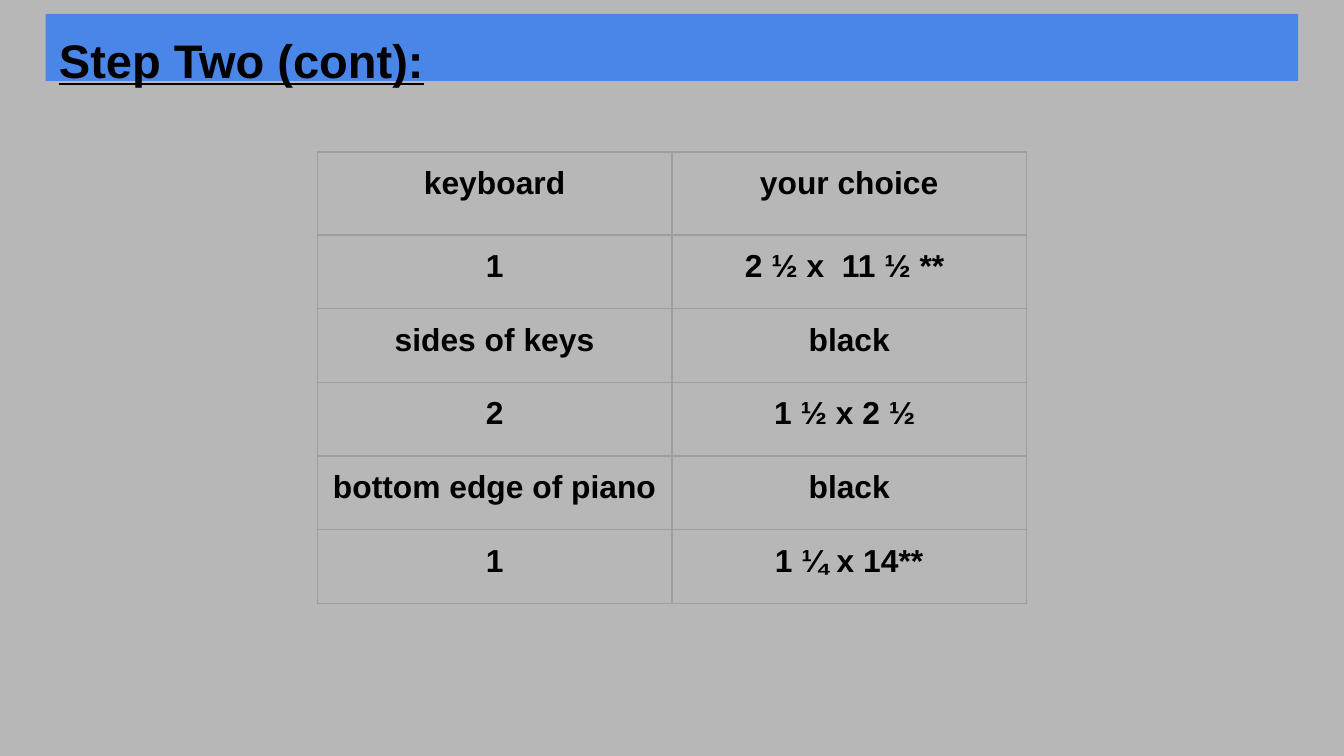
from lxml.etree import SubElement
from pptx import Presentation
from pptx.dml.color import RGBColor
from pptx.enum.shapes import MSO_SHAPE
from pptx.enum.text import MSO_ANCHOR, PP_ALIGN
from pptx.oxml.ns import qn
from pptx.util import Pt

FONT = "Arial"
INSET = 7.2
ROWS = [
    ("keyboard", "your choice"),
    ("1", "2 ½ x  11 ½ ** "),
    ("sides of keys", "black"),
    ("2", "1 ½ x 2 ½ "),
    ("bottom edge of piano", "black"),
    ("1", "1 ¼ x 14**"),
]


def rgb(value):
    return RGBColor.from_string(value)


def add_run(p, text, size, underline=None):
    r = p.add_run()
    r.text = text
    r.font.name = FONT
    r.font.size = Pt(size)
    r.font.bold = True
    r.font.underline = underline
    r.font.color.rgb = rgb("000000")


def set_margins(box, top=INSET):
    """Set the text insets of a text frame or a table cell."""
    box.margin_left = box.margin_right = box.margin_bottom = Pt(INSET)
    box.margin_top = Pt(top)
    box.vertical_anchor = MSO_ANCHOR.TOP


def add_title_bar(s, text):
    sp = s.shapes.add_shape(MSO_SHAPE.RECTANGLE, Pt(24.5), Pt(7.4), Pt(671), Pt(36))
    sp.shadow.inherit = False
    sp.fill.solid()
    sp.fill.fore_color.rgb = rgb("4A86E8")
    sp.line.fill.background()
    tf = sp.text_frame
    tf.word_wrap = True
    set_margins(tf, top=9.7)
    p = tf.paragraphs[0]
    p.alignment = PP_ALIGN.LEFT
    add_run(p, text, 25.2, underline=True)


def set_borders(cell, color, width):
    tc_pr = cell._tc.get_or_add_tcPr()
    for i, side in enumerate(("a:lnL", "a:lnR", "a:lnT", "a:lnB")):
        ln = SubElement(tc_pr, qn(side), w=str(Pt(width)))
        fill = SubElement(ln, qn("a:solidFill"))
        SubElement(fill, qn("a:srgbClr"), val=color)
        tc_pr.remove(ln)
        tc_pr.insert(i, ln)


def fill_cell(cell, text):
    set_margins(cell)
    cell.fill.background()
    set_borders(cell, "9E9E9E", 0.75)
    p = cell.text_frame.paragraphs[0]
    p.alignment = PP_ALIGN.CENTER
    add_run(p, text, 17)


def add_size_table(s, rows):
    heights = [44.5] + [39.5] * (len(rows) - 1)
    widths = [190] * len(rows[0])
    frame = s.shapes.add_table(len(rows), len(widths), Pt(170), Pt(81.4),
                               Pt(sum(widths)), Pt(sum(heights)))
    table = frame.table
    table.first_row = table.horz_banding = False
    for column, width in zip(table.columns, widths):
        column.width = Pt(width)
    for row, height, texts in zip(table.rows, heights, rows):
        row.height = Pt(height)
        for cell, text in zip(row.cells, texts):
            fill_cell(cell, text)


def main():
    prs = Presentation()
    prs.slide_width, prs.slide_height = Pt(720), Pt(405)
    s = prs.slides.add_slide(prs.slide_layouts[6])
    s.background.fill.solid()
    s.background.fill.fore_color.rgb = rgb("B7B7B7")
    add_title_bar(s, "Step Two (cont):")
    add_size_table(s, ROWS)
    prs.save("out.pptx")


if __name__ == "__main__":
    main()
